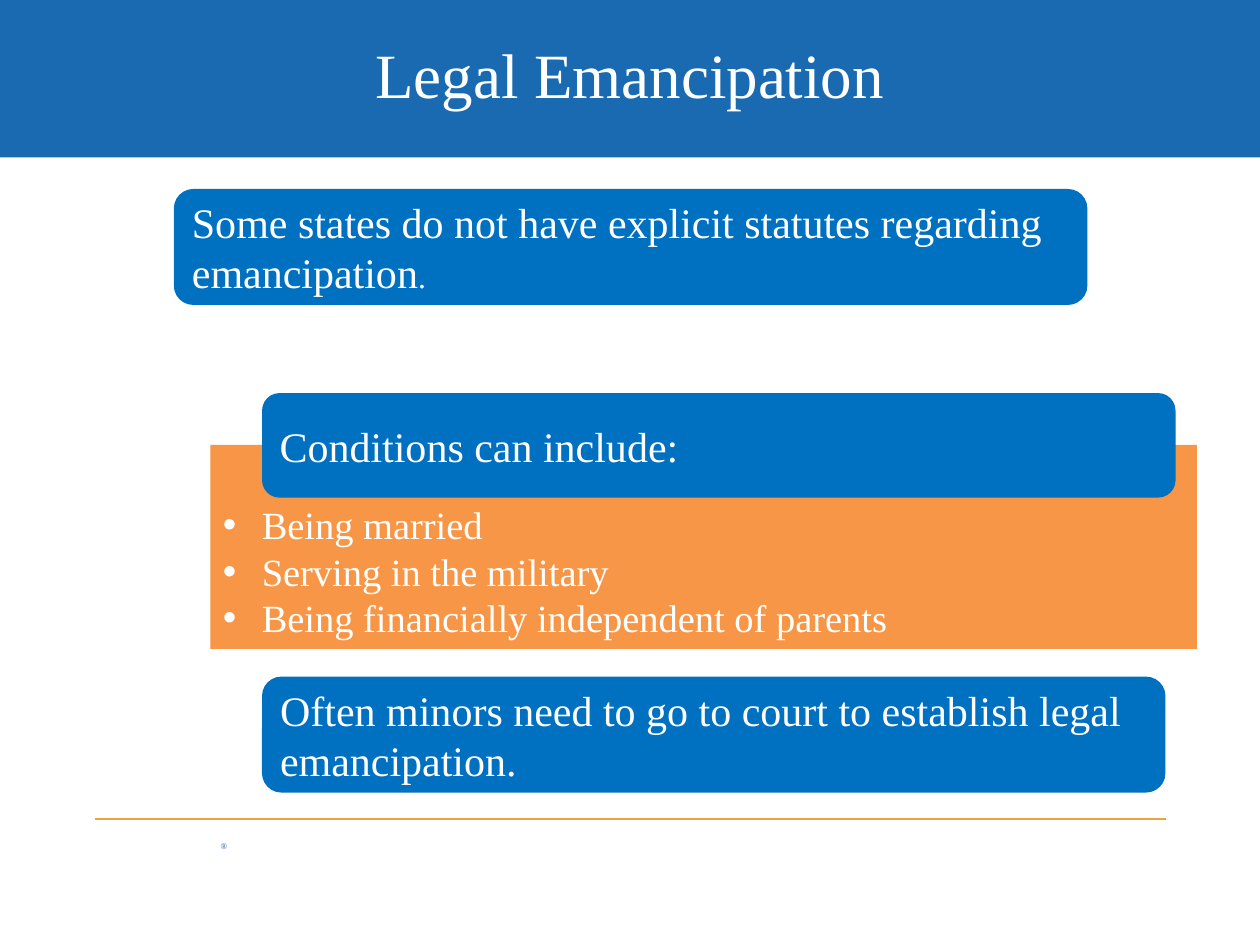
from dataclasses import dataclass

from lxml import etree
from pptx import Presentation
from pptx import util as u
from pptx.dml.color import RGBColor
from pptx.enum import shapes, text
from pptx.oxml.ns import qn


@dataclass(frozen=True)
class Theme:
    font: str = "Times New Roman"
    banner: str = "196AB0"
    card: str = "0070C0"
    panel: str = "F79646"
    rule: str = "EEA33C"
    light: str = "FFFFFF"
    title_size: int = 36
    card_size: int = 24
    list_size: int = 22
    period_size: int = 18
    mark_size: int = 5


THEME = Theme()


def inches(box):
    return [u.Inches(v) for v in box]


def add_run(p, words, size, color=THEME.light):
    r = p.add_run()
    r.text = words
    r.font.name = THEME.font
    r.font.size = u.Pt(size)
    r.font.color.rgb = RGBColor.from_string(color)


def add_block(s, kind, box, fill):
    sp = s.shapes.add_shape(kind, *inches(box))
    sp.shadow.inherit = False
    sp.fill.solid()
    sp.fill.fore_color.rgb = RGBColor.from_string(fill)
    sp.line.fill.background()
    sp.text_frame.word_wrap = True
    return sp


def add_bullet(p, indent):
    pPr = p._p.get_or_add_pPr()
    pPr.set("marL", str(u.Inches(indent)))
    pPr.set("indent", str(-u.Inches(indent)))
    etree.SubElement(pPr, qn("a:buFont")).set("typeface", "Arial")
    etree.SubElement(pPr, qn("a:buChar")).set("char", "•")


def banner(s, box, title):
    sp = add_block(s, shapes.MSO_SHAPE.RECTANGLE, box, THEME.banner)
    tf = sp.text_frame
    tf.vertical_anchor = text.MSO_ANCHOR.MIDDLE
    tf.margin_bottom = u.Inches(0.13)
    p = tf.paragraphs[0]
    p.alignment = text.PP_ALIGN.CENTER
    add_run(p, title, THEME.title_size)


def card(s, box, runs):
    sp = add_block(s, shapes.MSO_SHAPE.ROUNDED_RECTANGLE, box, THEME.card)
    tf = sp.text_frame
    tf.vertical_anchor = text.MSO_ANCHOR.MIDDLE
    p = tf.paragraphs[0]
    p.alignment = text.PP_ALIGN.LEFT
    for words, size in runs:
        add_run(p, words, size)


def bullet_panel(s, box, items):
    sp = add_block(s, shapes.MSO_SHAPE.RECTANGLE, box, THEME.panel)
    tf = sp.text_frame
    tf.vertical_anchor = text.MSO_ANCHOR.TOP
    tf.margin_top = u.Inches(0.45)
    for i, item in enumerate(items):
        p = tf.add_paragraph() if i else tf.paragraphs[0]
        p.alignment = text.PP_ALIGN.LEFT
        add_bullet(p, 0.31)
        add_run(p, item, THEME.list_size)


def footer(s, box):
    left, top, width, height = box
    rule = s.shapes.add_connector(
        shapes.MSO_CONNECTOR.STRAIGHT, *inches((left, top, left + width, top))
    )
    rule.line.color.rgb = RGBColor.from_string(THEME.rule)
    rule.line.width = u.Pt(0.75)
    etree.SubElement(rule._element.spPr, qn("a:effectLst"))

    mark = s.shapes.add_textbox(*inches((left + 1, top + 0.17, 0.25, height - 0.17)))
    tf = mark.text_frame
    tf.word_wrap = True
    tf.margin_left = tf.margin_top = tf.margin_right = tf.margin_bottom = 0
    add_run(tf.paragraphs[0], "®", THEME.mark_size, THEME.banner)


def main():
    prs = Presentation()
    prs.slide_width, prs.slide_height = inches((10, 7.5))
    s = prs.slides.add_slide(prs.slide_layouts[6])

    banner(s, (0, 0, 10, 1.25), "Legal Emancipation")
    footer(s, (0.75, 6.5, 8.5, 0.25))
    bullet_panel(
        s,
        (1.67, 3.53, 7.83, 1.62),
        [
            "Being married",
            "Serving in the military",
            "Being financially independent of parents",
        ],
    )
    statutes = "Some states do not have explicit statutes regarding emancipation"
    court = "Often minors need to go to court to establish legal emancipation."
    card(
        s,
        (1.38, 1.5, 7.25, 0.92),
        [(statutes, THEME.card_size), (".", THEME.period_size)],
    )
    card(s, (2.08, 3.12, 7.25, 0.83), [("Conditions can include:", THEME.card_size)])
    card(s, (2.08, 5.37, 7.17, 0.92), [(court, THEME.card_size)])

    prs.save("out.pptx")


if __name__ == "__main__":
    main()
